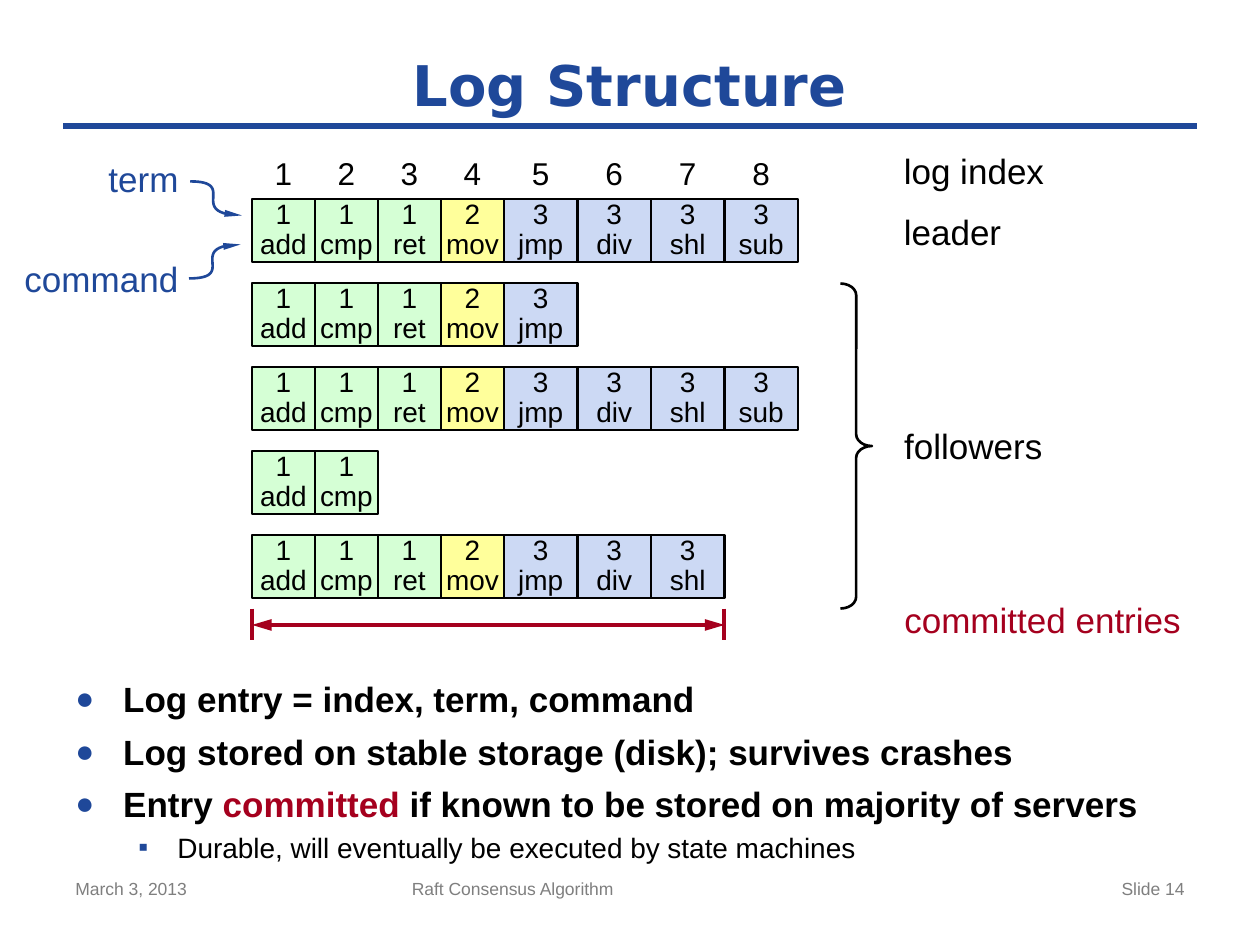
import dataclasses
import itertools

import pptx
import pptx.dml.color
import pptx.enum.shapes
import pptx.enum.text
import pptx.oxml.ns
import pptx.oxml.xmlchemy
import pptx.util
from lxml import etree

Inches, Pt = pptx.util.Inches, pptx.util.Pt
ALIGN = pptx.enum.text.PP_ALIGN
ANCHOR = pptx.enum.text.MSO_ANCHOR
SHAPE = pptx.enum.shapes.MSO_SHAPE
qn = pptx.oxml.ns.qn

BLUE, RED, BLACK, GREY = "1F4899", "A5001E", "000000", "7F7F7F"
FILLS = {1: "D5FFD5", 2: "FFFF9B", 3: "CCD9F4"}  # by term


@dataclasses.dataclass
class Label:
    text: str
    left: float
    top: float
    width: float
    height: float = 0.34
    size: float = 20
    color: str = BLACK
    align: ALIGN = ALIGN.CENTER
    font: str = "Arial"
    bold: bool = False
    tight: bool = True  # no insets, no wrapping
    grow: bool = True


@dataclasses.dataclass
class Entry:
    term: int
    command: str
    left: float
    width: float


@dataclasses.dataclass
class Point:
    runs: list[tuple[str, str]]
    size: float = 20
    bold: bool = True
    level: int = 0
    margin: float = 0.38
    hang: float = 0.38
    before: float = 6
    bullet: str = "●"
    scale: int = 90


def rgb(code: str) -> pptx.dml.color.RGBColor:
    return pptx.dml.color.RGBColor.from_string(code)


def style(run, size: float, color: str, bold: bool = False, font: str = "Arial") -> None:
    run.font.size, run.font.bold, run.font.name = Pt(size), bold, font
    run.font.color.rgb = rgb(color)


def strip(frame) -> None:
    frame.margin_left = frame.margin_right = 0
    frame.margin_top = frame.margin_bottom = 0


def stroke(shape, color: str, width: float) -> None:
    shape.line.color.rgb = rgb(color)
    shape.line.width = Pt(width)


def tip(shape, end: str, width: str) -> None:
    line = shape.element.spPr.find(qn("a:ln"))
    etree.SubElement(line, qn(f"a:{end}"), type="triangle", w=width, len="lg")


def draw_label(slide, item: Label) -> None:
    box = slide.shapes.add_textbox(
        Inches(item.left), Inches(item.top), Inches(item.width), Inches(item.height))
    frame = box.text_frame
    frame.word_wrap = not item.tight
    if item.tight:
        strip(frame)
    if item.grow:
        frame.auto_size = pptx.enum.text.MSO_AUTO_SIZE.SHAPE_TO_FIT_TEXT
    if item.font != "Arial":
        frame.vertical_anchor = ANCHOR.MIDDLE
    para = frame.paragraphs[0]
    para.text, para.alignment = item.text, item.align
    style(para.runs[0], item.size, item.color, item.bold, item.font)


def draw_entry(slide, entry: Entry, top: float) -> None:
    cell = slide.shapes.add_shape(
        SHAPE.RECTANGLE, Inches(entry.left), Inches(top), Inches(entry.width), Inches(0.5))
    cell.shadow.inherit = False
    cell.fill.solid()
    cell.fill.fore_color.rgb = rgb(FILLS[entry.term])
    stroke(cell, BLACK, 1.5)
    frame = cell.text_frame
    strip(frame)
    frame.word_wrap, frame.vertical_anchor = True, ANCHOR.MIDDLE
    para = frame.paragraphs[0]
    para.text = f"{entry.term}\n{entry.command}"
    para.alignment, para.line_spacing = ALIGN.CENTER, Pt(17)
    for run in para.runs:
        style(run, 16, BLACK)


def draw_line(slide, start: tuple[float, float], end: tuple[float, float],
              color: str, width: float):
    line = slide.shapes.add_connector(
        pptx.enum.shapes.MSO_CONNECTOR.STRAIGHT, *map(Inches, start + end))
    stroke(line, color, width)
    etree.SubElement(line.element.spPr, qn("a:effectLst"))
    return line


def draw_curve(slide, knots: list[tuple[float, float]], steps: int = 32) -> None:
    """Draw a cubic curve through its four control points, as short steps."""
    dots = []
    for t in (step / steps for step in range(steps + 1)):
        mix = ((1 - t) ** 3, 3 * t * (1 - t) ** 2, 3 * t * t * (1 - t), t ** 3)
        dots.append(tuple(Inches(sum(m * k[axis] for m, k in zip(mix, knots)))
                          for axis in (0, 1)))
    pen = slide.shapes.build_freeform(*dots[0])
    pen.add_line_segments(dots[1:], close=False)
    curve = pen.convert_to_shape()
    curve.shadow.inherit = False
    curve.fill.background()
    stroke(curve, BLUE, 1.5)
    tip(curve, "tailEnd", "sm")


def draw_point(para, point: Point) -> None:
    para.level, para.space_before = point.level, Pt(point.before)
    for text, color in point.runs:
        run = para.add_run()
        run.text = text
        style(run, point.size, color, point.bold)
    props = para._p.get_or_add_pPr()
    props.set("marL", str(Inches(point.margin)))
    props.set("indent", str(-Inches(point.hang)))
    tint = etree.SubElement(props, qn("a:buClr"))
    etree.SubElement(tint, qn("a:srgbClr"), val=BLUE)
    etree.SubElement(props, qn("a:buSzPct"), val=str(point.scale * 1000))
    etree.SubElement(props, qn("a:buFont"), typeface="Arial")
    etree.SubElement(props, qn("a:buChar"), char=point.bullet)


def main() -> None:
    deck = pptx.Presentation()
    deck.slide_width, deck.slide_height = Inches(10), Inches(7.5)
    slide = deck.slides.add_slide(deck.slide_layouts[6])

    # Title and rule
    draw_line(slide, (0.5, 1), (9.5, 1), BLUE, 4)
    draw_label(slide, Label("Log Structure", 0.5, 0.33, 9, 0.67, 32, BLUE,
                            font="DejaVu Sans", bold=True, tight=False, grow=False))

    # Logs: the leader first, then four followers
    terms = (1, 1, 1, 2, 3, 3, 3, 3)
    names = "add cmp ret mov jmp div shl sub".split()
    widths = [0.5] * 4 + [7 / 12] * 4
    lefts = itertools.accumulate(widths[:-1], initial=2)
    log = [Entry(*parts) for parts in zip(terms, names, lefts, widths)]
    for index, entry in enumerate(log, 1):
        draw_label(slide, Label(str(index), entry.left, 1.17, entry.width, 0.4, 18,
                                tight=False))
    for row, count in enumerate((8, 5, 8, 2, 7)):
        for entry in log[:count]:
            draw_entry(slide, entry, 1.58 + row * 2 / 3)

    # Followers brace
    brace = slide.shapes.add_shape(
        SHAPE.RIGHT_BRACE, Inches(6.67), Inches(2.25), Inches(0.25), Inches(2.58))
    brace.adjustments[0], brace.adjustments[1] = 0.372, 0.5
    brace.shadow.inherit = False
    brace.fill.background()
    stroke(brace, BLACK, 1.5)

    # Committed range, up to the last entry held by a majority
    first, last = log[0].left, log[7].left
    for x in (first, last):
        draw_line(slide, (x, 4.83), (x, 5.08), RED, 2.25)
    span = draw_line(slide, (first, 4.96), (last, 4.96), RED, 2.25)
    for end in ("headEnd", "tailEnd"):
        tip(span, end, "med")

    # Captions and pointers
    for item in (
        Label("log index", 7.17, 1.19, 1.12),
        Label("leader", 7.17, 1.67, 0.78),
        Label("followers", 7.17, 3.37, 1.11),
        Label("committed entries", 7.17, 4.75, 2.21, color=RED),
        Label("term", 0.86, 1.25, 0.56, color=BLUE),
        Label("command", 0.19, 2.04, 1.23, color=BLUE),
    ):
        draw_label(slide, item)
    draw_curve(slide, [(1.51, 1.44), (1.9, 1.44), (1.47, 1.7), (1.92, 1.71)])
    draw_curve(slide, [(1.5, 2.21), (1.9, 2.21), (1.46, 1.95), (1.91, 1.94)])

    # Key points
    body = slide.shapes.add_textbox(Inches(0.5), Inches(5.33), Inches(9), Inches(1.58))
    frame = body.text_frame
    frame.word_wrap = True
    points = (
        Point([("Log entry = index, term, command", BLACK)]),
        Point([("Log stored on stable storage (disk); survives crashes", BLACK)]),
        Point([("Entry ", BLACK), ("committed", RED),
               (" if known to be stored on majority of servers", BLACK)]),
        Point([("Durable, will eventually be executed by state machines", BLACK)],
              16, False, 1, 0.81, 0.31, 3, "▪", 100),
    )
    for spot, point in enumerate(points):
        draw_point(frame.add_paragraph() if spot else frame.paragraphs[0], point)

    # Footer
    for text, left, width, align in (
        ("March 3, 2013", 0.5, 2.33, ALIGN.LEFT),
        ("Raft Consensus Algorithm", 3.17, 3.75, ALIGN.LEFT),
        ("Slide 14", 7.17, 2.33, ALIGN.RIGHT),
    ):
        draw_label(slide, Label(text, left, 6.92, width, 0.43, 10, GREY, align,
                                tight=False, grow=False))

    deck.save("out.pptx")


if __name__ == "__main__":
    main()
